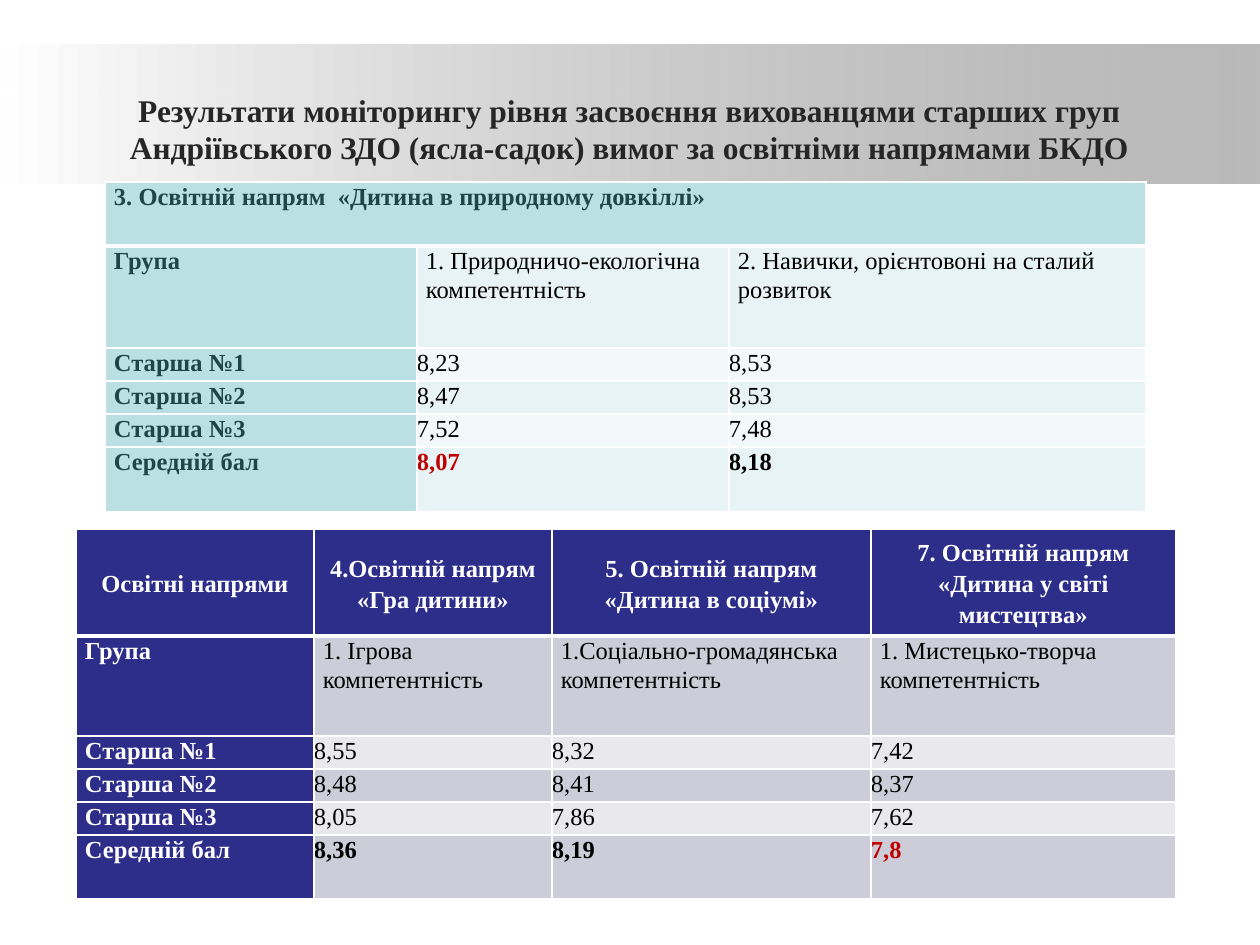
from dataclasses import dataclass

from lxml.etree import SubElement
from pptx import Presentation
from pptx.dml.color import RGBColor
from pptx.enum.shapes import MSO_SHAPE
from pptx.enum.text import MSO_ANCHOR, MSO_AUTO_SIZE, PP_ALIGN
from pptx.oxml.ns import qn
from pptx.util import Emu, Pt

FONT = "Times New Roman"
BLACK, WHITE, RED = "000000", "FFFFFF", "C00000"
CELL_INSET = 9


@dataclass
class ScoreTable:
    left: int
    top: int
    columns: list[int]
    rows: list[int]
    cells: list[list[str]]
    main_fill: str
    main_text: str
    bands: tuple[str, str]
    lowest: str
    header_centred: bool


TABLES = [
    ScoreTable(
        left=105, top=182,
        columns=[312, 312, 417], rows=[64, 102, 33, 33, 33, 65],
        cells=[
            ["3. Освітній напрям  «Дитина в природному довкіллі»"],
            ["Група", "1. Природничо-екологічна компетентність",
             "2. Навички, орієнтовоні на сталий розвиток"],
            ["Старша №1", "8,23", "8,53"],
            ["Старша №2", "8,47", "8,53"],
            ["Старша №3", "7,52", "7,48"],
            ["Середній бал", "8,07", "8,18"],
        ],
        main_fill="BBE0E3", main_text="1E4649", bands=("E7F3F4", "F3F9FA"),
        lowest="8,07", header_centred=False,
    ),
    ScoreTable(
        left=76, top=529,
        columns=[238, 238, 319, 305], rows=[107, 100, 33, 33, 33, 64],
        cells=[
            ["Освітні напрями", "4.Освітній напрям «Гра дитини»",
             "5. Освітній напрям «Дитина в соціумі»",
             "7. Освітній напрям «Дитина у світі мистецтва»"],
            ["Група", "1. Ігрова компетентність",
             "1.Соціально-громадянська компетентність",
             "1. Мистецько-творча компетентність"],
            ["Старша №1", "8,55", "8,32", "7,42"],
            ["Старша №2", "8,48", "8,41", "8,37"],
            ["Старша №3", "8,05", "7,86", "7,62"],
            ["Середній бал", "8,36", "8,19", "7,8"],
        ],
        main_fill="2D2D8A", main_text=WHITE, bands=("CDCDDA", "E8E8ED"),
        lowest="7,8", header_centred=True,
    ),
]


def px(value: int) -> Emu:
    return Emu(round(value * 914400 / 126))


def color(value: str) -> RGBColor:
    return RGBColor.from_string(value)


def format_runs(paragraph, size: int, text_color: str, bold: bool) -> None:
    for run in paragraph.runs:
        run.font.name = FONT
        run.font.size = Pt(size)
        run.font.bold = bold
        run.font.color.rgb = color(text_color)


def add_band(slide) -> None:
    band = slide.shapes.add_shape(MSO_SHAPE.RECTANGLE, px(0), px(45), px(1260), px(139))
    band.shadow.inherit = False
    band.line.fill.background()
    band.fill.gradient()
    band.fill.gradient_angle = 0
    for stop, position, value in zip(band.fill.gradient_stops, (0, 1), (WHITE, "808080")):
        stop.position = position
        stop.color.rgb = color(value)
    # The grey end is partly transparent
    grey = list(band._element.iter(qn("a:srgbClr")))[-1]
    SubElement(grey, qn("a:alpha"), val="54000")
    # Behind the title
    slide.shapes._spTree.insert(2, band._element)


def set_title(slide, text: str) -> None:
    title = slide.shapes.title
    title.left, title.top, title.width, title.height = px(74), px(78), px(1111), px(101)
    frame = title.text_frame
    frame.text = text
    frame.word_wrap = True
    frame.auto_size = MSO_AUTO_SIZE.NONE
    frame.vertical_anchor = MSO_ANCHOR.MIDDLE
    paragraph = frame.paragraphs[0]
    paragraph.alignment = PP_ALIGN.CENTER
    format_runs(paragraph, 18, "262626", True)


def set_borders(cell, top: int, bottom: int) -> None:
    properties = cell._tc.get_or_add_tcPr()
    for tag, width in (("lnL", 1), ("lnR", 1), ("lnT", top), ("lnB", bottom)):
        line = SubElement(properties, qn(f"a:{tag}"), w=str(Pt(width)))
        fill = SubElement(line, qn("a:solidFill"))
        SubElement(fill, qn("a:srgbClr"), val=WHITE)


def format_cell(cell, data: ScoreTable, row: int, column: int) -> None:
    is_header = row == 0
    is_main = is_header or column == 0
    is_score = row > 1 and column > 0
    is_average = row == len(data.rows) - 1

    set_borders(cell, top=3 if row == 1 else 1, bottom=3 if is_header else 1)
    cell.fill.solid()
    cell.fill.fore_color.rgb = color(data.main_fill if is_main else data.bands[(row - 1) % 2])
    cell.margin_left = cell.margin_right = px(0 if is_score else CELL_INSET)
    cell.margin_top = cell.margin_bottom = 0

    centred = is_header and data.header_centred
    cell.vertical_anchor = MSO_ANCHOR.MIDDLE if centred else MSO_ANCHOR.TOP
    paragraph = cell.text_frame.paragraphs[0]
    paragraph.alignment = PP_ALIGN.CENTER if centred else PP_ALIGN.LEFT
    paragraph.line_spacing = 1.15 if centred else 1.07
    paragraph.space_after = Pt(0 if is_score else 8)

    text_color = data.main_text if is_main else BLACK
    if is_average and cell.text_frame.text == data.lowest:
        text_color = RED
    format_runs(paragraph, 14, text_color, is_main or is_average)


def add_score_table(slide, data: ScoreTable) -> None:
    table = slide.shapes.add_table(
        len(data.rows), len(data.columns), px(data.left), px(data.top),
        px(sum(data.columns)), px(sum(data.rows)),
    ).table
    table.first_row = table.horz_banding = False
    for column, width in zip(table.columns, data.columns):
        column.width = px(width)
    for row, height in zip(table.rows, data.rows):
        row.height = px(height)

    for row, texts in enumerate(data.cells):
        for column, text in enumerate(texts):
            table.cell(row, column).text_frame.text = text
        for column in range(len(data.columns)):
            format_cell(table.cell(row, column), data, row, column)
        # A single text spans the whole row
        if len(texts) == 1:
            table.cell(row, 0).merge(table.cell(row, len(data.columns) - 1))


def main() -> None:
    presentation = Presentation()
    presentation.slide_width, presentation.slide_height = px(1260), px(945)
    slide = presentation.slides.add_slide(presentation.slide_layouts[5])

    # Heading
    add_band(slide)
    set_title(slide, "Результати моніторингу рівня засвоєння вихованцями старших груп "
                     "Андріївського ЗДО (ясла-садок) вимог за освітніми напрямами БКДО")

    # Scores by field of education
    for data in TABLES:
        add_score_table(slide, data)

    presentation.save("out.pptx")


if __name__ == "__main__":
    main()
